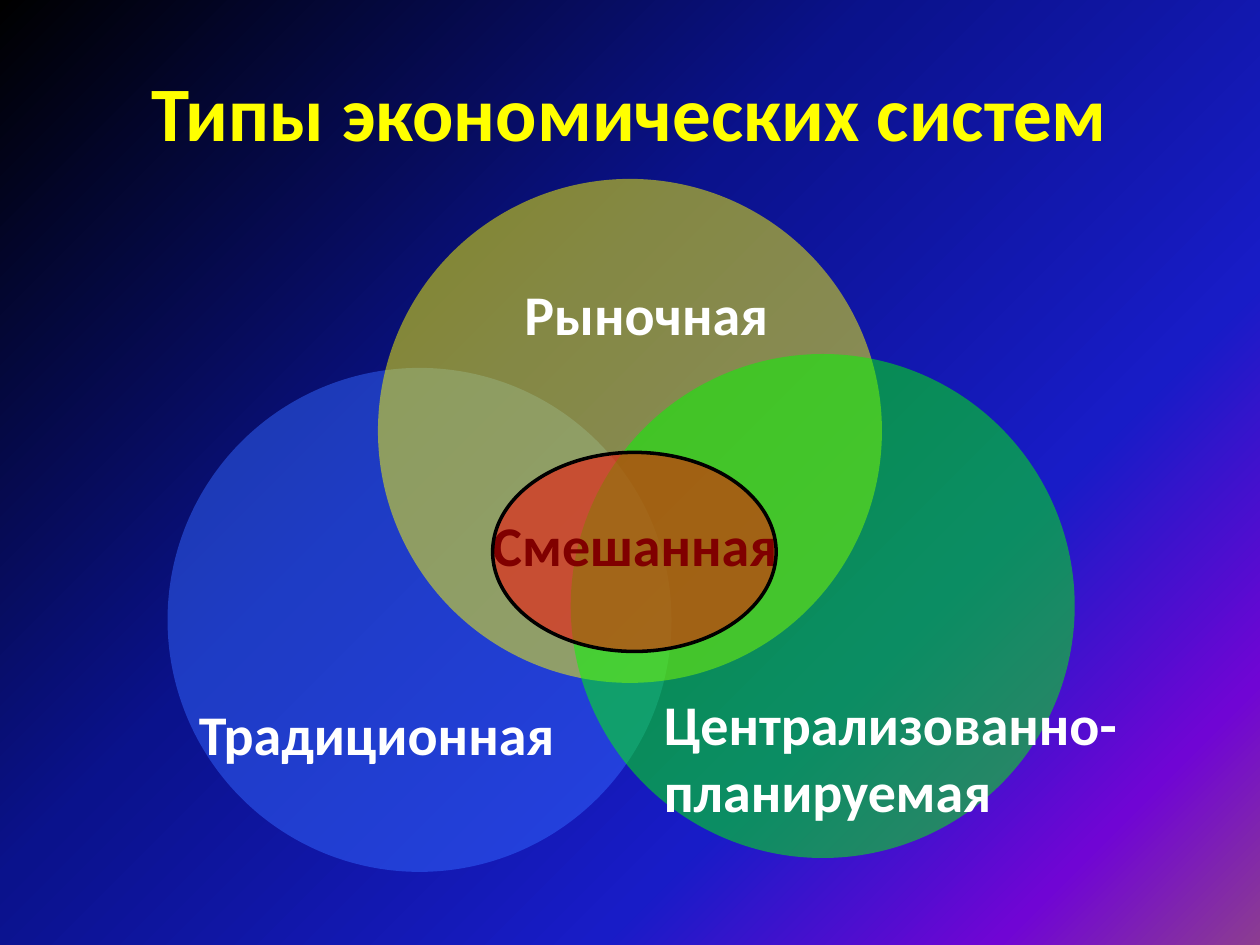
from copy import deepcopy
from dataclasses import dataclass
from typing import Optional

from lxml import etree
from pptx import Presentation
from pptx import util as u
from pptx.dml.color import RGBColor
from pptx.enum import shapes, text
from pptx.oxml.ns import qn


@dataclass(frozen=True)
class Theme:
    font: str = "Calibri"
    head: int = 44
    body: int = 32
    yellow: str = "FFFF00"
    white: str = "FFFFFF"
    black: str = "000000"
    blue: str = "3366FF"
    green: str = "00FF00"
    red: str = "FF0000"
    back: tuple = ((0, "000000"), (40, "0A128C"), (70, "181CC7"),
                   (88, "7005D4"), (100, "8C3D91"))


@dataclass(frozen=True)
class Box:
    left: float
    top: float
    width: float
    height: float

    def emu(self) -> list:
        return [u.Inches(v) for v in (self.left, self.top, self.width, self.height)]


@dataclass(frozen=True)
class Oval:
    box: Box
    color: str
    line: Optional[str] = None


@dataclass(frozen=True)
class Label:
    words: str
    box: Box
    color: str
    align: text.PP_ALIGN = text.PP_ALIGN.LEFT


T = Theme()
MID = text.PP_ALIGN.CENTER
SIZE = 4  # diameter of the three large circles

CIRCLES = [
    Oval(Box(1.33, 2.92, SIZE, SIZE), T.blue),
    Oval(Box(3, 1.42, SIZE, SIZE), T.yellow),
    Oval(Box(4.53, 2.81, SIZE, SIZE), T.green),
]
CORE = Oval(Box(3.91, 3.59, 2.25, 1.58), T.red, T.black)
LABELS = [
    Label("Традиционная", Box(1.48, 5.5, 3.2, 0.64), T.white),
    Label("Рыночная", Box(3.92, 2.17, 2.42, 0.64), T.white, MID),
    Label("Централизованно-планируемая", Box(5.17, 5.42, 3.82, 1.18), T.white),
    Label("Смешанная", Box(3.75, 4, 2.58, 0.64), T.black, MID),
]


def write(frame, words: str, *, size: int, color: str,
          align=text.PP_ALIGN.LEFT, anchor=text.MSO_ANCHOR.TOP) -> None:
    frame.word_wrap = True
    frame.vertical_anchor = anchor
    para = frame.paragraphs[0]
    para.alignment = align
    run = para.add_run()
    run.text = words
    font = run.font
    font.name, font.size, font.bold = T.font, u.Pt(size), True
    font.color.rgb = RGBColor.from_string(color)


def paint(slide) -> None:
    """Diagonal background gradient with all the theme's stops."""
    fill = slide.background.fill
    fill.gradient()
    fill.gradient_angle = 315
    stops = slide.element.find(".//" + qn("a:gsLst"))
    while len(stops) < len(T.back):
        stops.append(deepcopy(stops[0]))
    for stop, (pos, color) in zip(fill.gradient_stops, T.back):
        stop.position = pos / 100
        stop.color.rgb = RGBColor.from_string(color)


def draw_oval(slide, oval: Oval) -> None:
    shape = slide.shapes.add_shape(shapes.MSO_SHAPE.OVAL, *oval.box.emu())
    shape.shadow.inherit = False
    shape.fill.solid()
    shape.fill.fore_color.rgb = RGBColor.from_string(oval.color)
    tint = shape.element.spPr.find(qn("a:solidFill"))[0]
    etree.SubElement(tint, qn("a:alpha"), val="50000")
    if oval.line:
        shape.line.color.rgb = RGBColor.from_string(oval.line)
        shape.line.width = u.Pt(2)
    else:
        shape.line.fill.background()


def draw_label(slide, label: Label) -> None:
    frame = slide.shapes.add_textbox(*label.box.emu()).text_frame
    write(frame, label.words, size=T.body, color=label.color, align=label.align)
    frame.auto_size = text.MSO_AUTO_SIZE.SHAPE_TO_FIT_TEXT


def main() -> None:
    deck = Presentation()
    deck.slide_width, deck.slide_height = u.Inches(10), u.Inches(7.5)
    slide = deck.slides.add_slide(deck.slide_layouts[5])
    paint(slide)

    # Title
    title = slide.shapes.title
    title.left, title.top, title.width, title.height = Box(0.5, 0.25, 9, 1.25).emu()
    write(title.text_frame, "Типы экономических систем", size=T.head,
          color=T.yellow, align=MID, anchor=text.MSO_ANCHOR.MIDDLE)

    # Venn diagram: the translucent core lies over its label
    for oval in CIRCLES:
        draw_oval(slide, oval)
    for label in LABELS:
        draw_label(slide, label)
    draw_oval(slide, CORE)

    deck.save("out.pptx")


if __name__ == "__main__":
    main()
